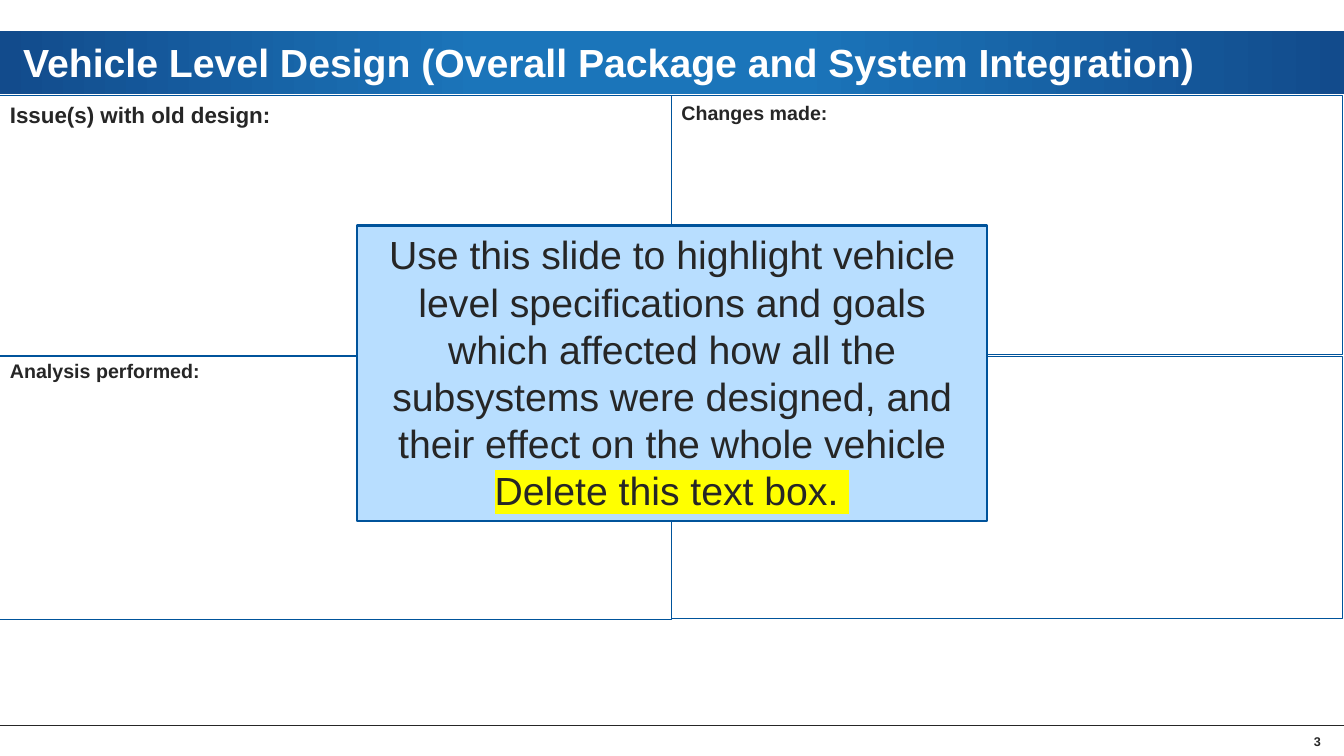
from lxml import etree
from pptx import Presentation
from pptx.dml.color import RGBColor
from pptx.enum.shapes import MSO_CONNECTOR, MSO_SHAPE
from pptx.enum.text import MSO_ANCHOR, PP_ALIGN
from pptx.oxml.ns import qn
from pptx.util import Inches, Pt

WHITE = RGBColor(0xFF, 0xFF, 0xFF)
INK = RGBColor(0x26, 0x26, 0x26)
BLUE = RGBColor(0x00, 0x53, 0x9B)
PALE = RGBColor(0xB8, 0xDE, 0xFF)
YELLOW = RGBColor(0xFF, 0xFF, 0x00)
NAVY = RGBColor(0x12, 0x4B, 0x8C)
SKY = RGBColor(0x1B, 0x75, 0xBA)


def add_box(left, top, width, height):
    box = slide.shapes.add_shape(MSO_SHAPE.RECTANGLE, Inches(left), Inches(top),
                                 Inches(width), Inches(height))
    box.shadow.inherit = False
    box.fill.background()
    box.text_frame.word_wrap = True
    return box


def add_run(para, text, size, bold=False, color=INK):
    run = para.add_run()
    run.text = text
    font = run.font
    font.name, font.size, font.bold = "Arial", Pt(size), bold
    font.color.rgb = color
    return run


deck = Presentation()
deck.slide_width, deck.slide_height = Inches(13.33), Inches(7.5)
slide = deck.slides.add_slide(deck.slide_layouts[5])

# Title band with a horizontal gradient
band = add_box(0, 0.31, 13.33, 0.62)
band.line.fill.background()
band.fill.gradient()
band.fill.gradient_angle = 0
stops = band.fill.gradient_stops[0]._gs.getparent()
stops.clear()
for place, color in [(0, NAVY), (36, SKY), (59, SKY), (100, NAVY)]:
    stop = etree.SubElement(stops, qn("a:gs"), pos=str(place * 1000))
    etree.SubElement(stop, qn("a:srgbClr"), val=str(color))

# Footer rule
rule = slide.shapes.add_connector(MSO_CONNECTOR.STRAIGHT, Inches(0), Inches(7.2),
                                  Inches(13.33), Inches(7.2))
rule.line.color.rgb = INK
rule.line.width = Pt(1)
etree.SubElement(rule._element.spPr, qn("a:effectLst"))

# Title, brought in front of its band
title = slide.shapes.title
slide.shapes._spTree.append(title._element)
title.left, title.top = Inches(0.23), Inches(0.32)
title.width, title.height = Inches(12.87), Inches(0.59)

# Slide number
number = slide.shapes.add_textbox(Inches(12.19), Inches(7.23), Inches(0.91), Inches(0.25))

for shape, text, size, color, align in [
    (title, "Vehicle Level Design (Overall Package and System Integration)",
     28, WHITE, PP_ALIGN.LEFT),
    (number, "3", 9, INK, PP_ALIGN.RIGHT),
]:
    frame = shape.text_frame
    frame.word_wrap = True
    frame.vertical_anchor = MSO_ANCHOR.MIDDLE
    frame.margin_left = frame.margin_right = 0
    frame.margin_top = frame.margin_bottom = 0
    para = frame.paragraphs[0]
    para.alignment = align
    add_run(para, text, size, True, color)

# Four panels
for left, top, height, text, size, space in [
    (6.66, 0.95, 2.57, "Changes made:", 14, 1),
    (0, 0.95, 2.59, "Issue(s) with old design:", 16, 1),
    (6.66, 3.54, 2.6, "Validation of new design:", 14, 0.95),
    (0, 3.53, 2.62, "Analysis performed:", 14, 0.95),
]:
    panel = add_box(left, top, 6.66, height)
    panel.line.color.rgb = BLUE
    panel.line.width = Pt(0.75)
    panel.text_frame.vertical_anchor = MSO_ANCHOR.TOP
    para = panel.text_frame.paragraphs[0]
    para.alignment = PP_ALIGN.LEFT
    para.line_spacing = space
    add_run(para, text, size, True)

# Instruction box
note = add_box(3.54, 2.24, 6.25, 2.93)
note.fill.solid()
note.fill.fore_color.rgb = PALE
note.line.color.rgb = BLUE
note.line.width = Pt(2)
frame = note.text_frame
frame.vertical_anchor = MSO_ANCHOR.TOP
guide = frame.paragraphs[0]
add_run(guide, "Use this slide to highlight vehicle level specifications and goals "
        "which affected how all the subsystems were designed, and their effect "
        "on the whole vehicle", 28)
prompt = frame.add_paragraph()
run = add_run(prompt, "Delete this text box. ", 28)
for para in (guide, prompt):
    para.alignment = PP_ALIGN.CENTER
mark = etree.Element(qn("a:highlight"))
etree.SubElement(mark, qn("a:srgbClr"), val=str(YELLOW))
run.font._element.find(qn("a:solidFill")).addnext(mark)

deck.save("out.pptx")
